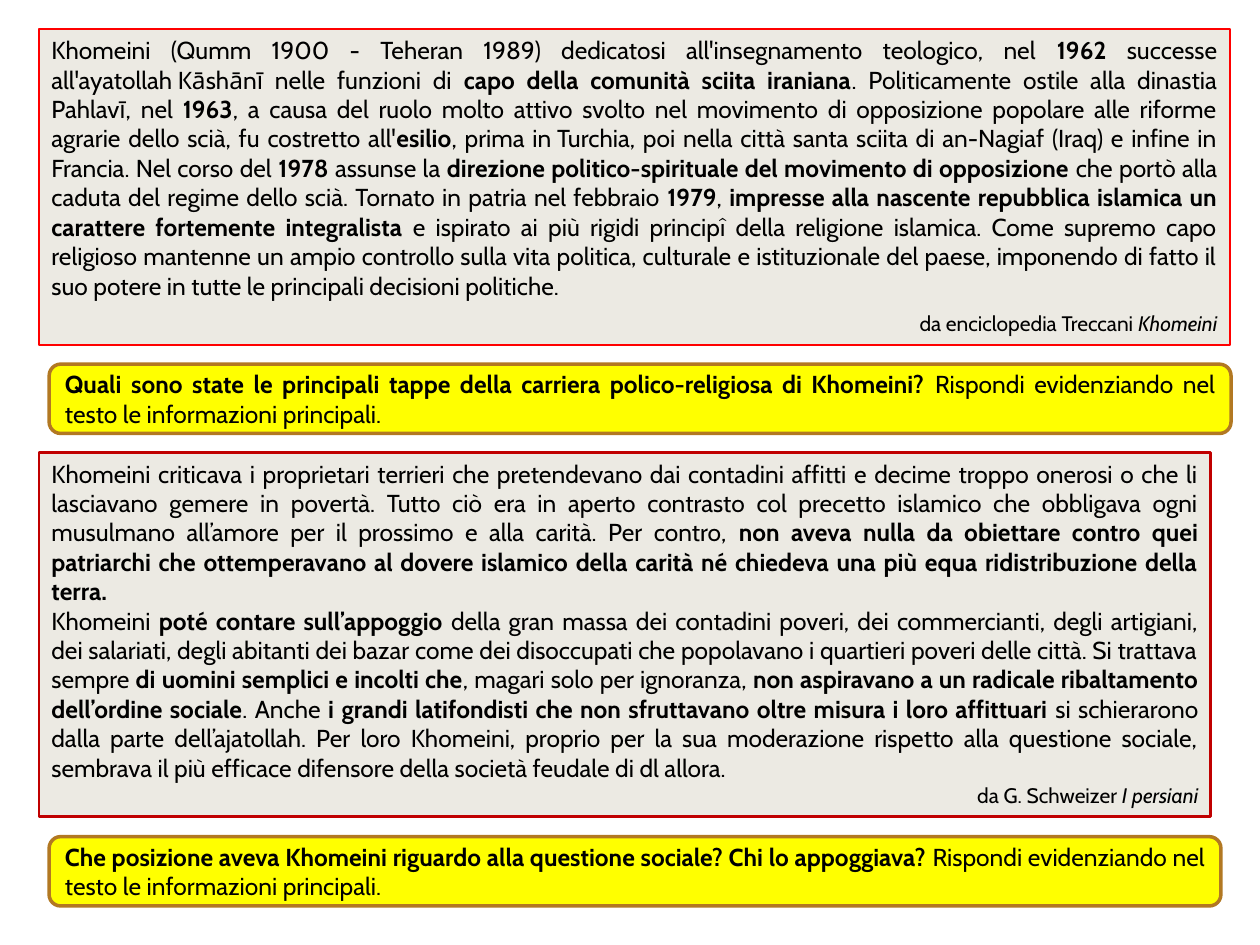
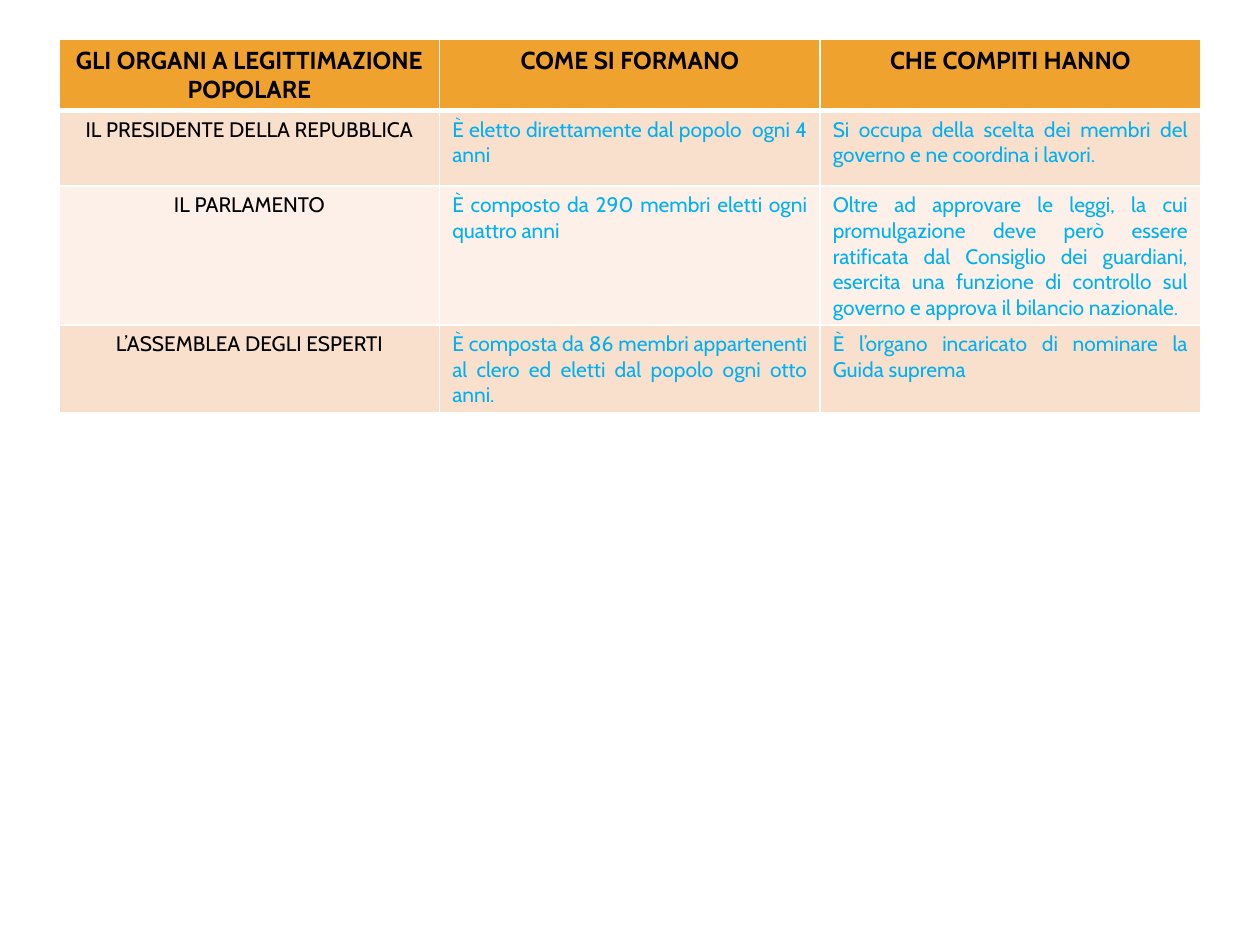
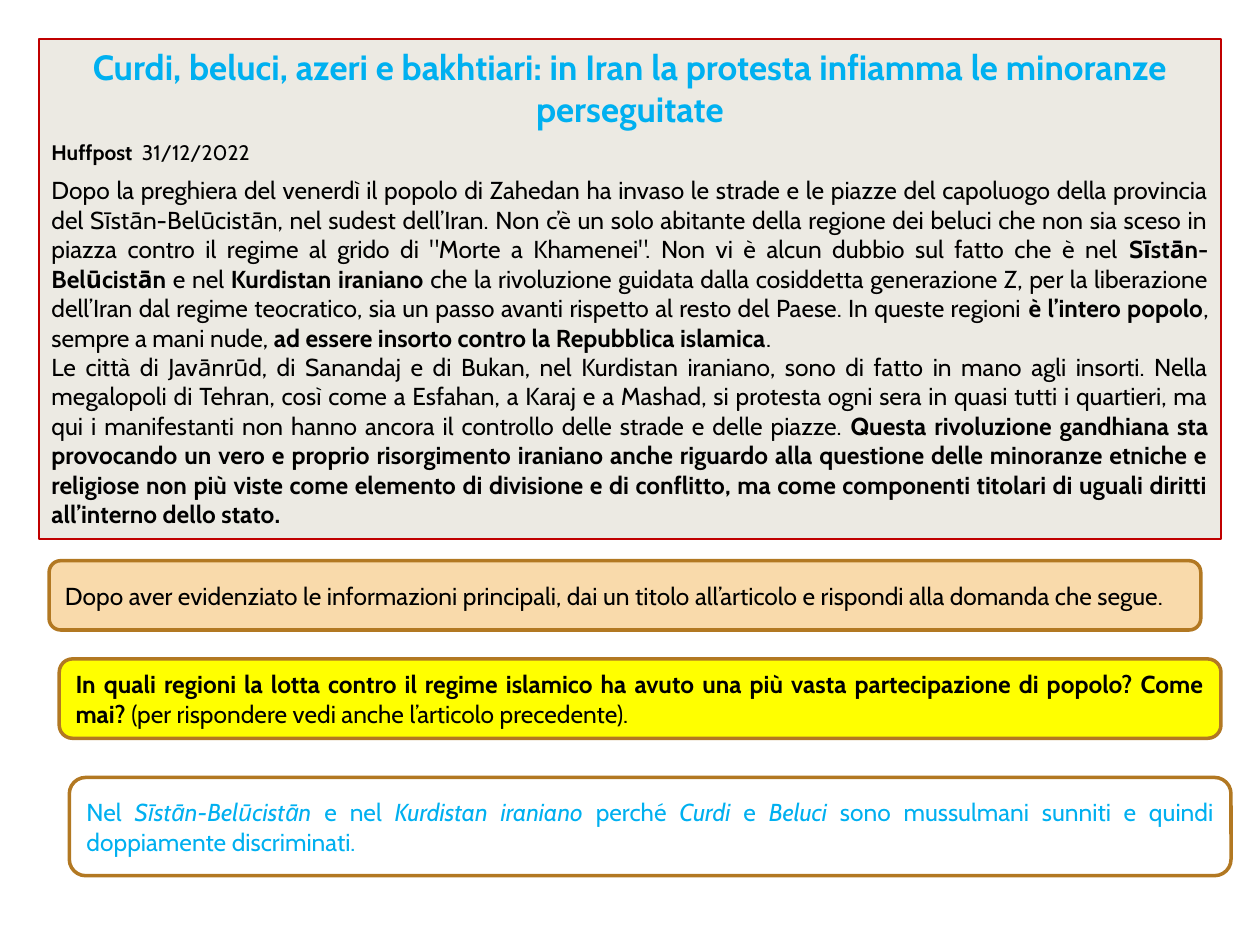
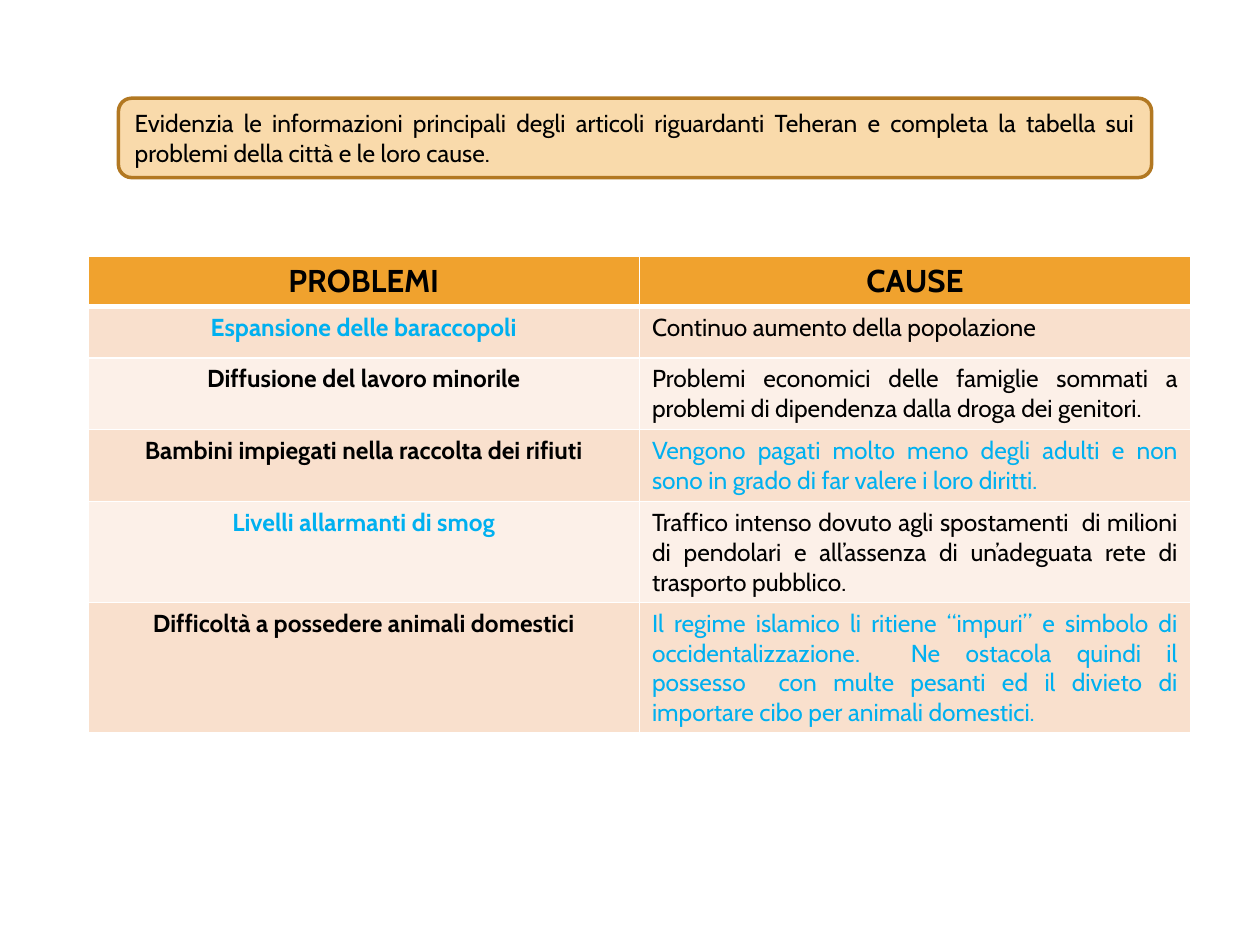
"""Build four worksheet slides on Khomeini, Iranian institutions, minorities and Teheran."""
import lxml.etree
import pptx
import pptx.dml.color
import pptx.enum.shapes
import pptx.enum.text
import pptx.oxml.ns
import pptx.util

Inches = pptx.util.Inches
Pt = pptx.util.Pt
Align = pptx.enum.text.PP_ALIGN
Anchor = pptx.enum.text.MSO_ANCHOR
Shape = pptx.enum.shapes.MSO_SHAPE

FONT = "Cabin"
NO_BREAK_SPACE = chr(160)
COLORS = {
    "text": "000000",
    "answer": "00B0F0",
    "reading": "ECEAE3",
    "question": "FFFF00",
    "task": "F9DAAB",
    "white": "FFFFFF",
    "brown": "B27822",
    "red": "FF0000",
    "dark red": "C00000",
    "header": "F0A22E",
    "odd row": "F9E0CD",
    "even row": "FCF0E8",
}

# Style: alignment, size, colour, bold by default, emphasis, space after
STYLES = {
    "body": (Align.JUSTIFY, 14, "text", False, "bold", 0),
    "body spaced": (Align.JUSTIFY, 14, "text", False, "bold", 6),
    "source": (Align.RIGHT, 12, "text", False, "italic", 0),
    "headline": (Align.CENTER, 20, "answer", True, "italic", 6),
    "dateline": (Align.JUSTIFY, 12, "text", False, "bold", 6),
    "answer": (Align.JUSTIFY, 14, "answer", False, "italic", 0),
    "organ header": (Align.CENTER, 14, "text", True, "italic", 0),
    "organ": (Align.CENTER, 12, "text", False, "bold", 0),
    "organ answer": (Align.JUSTIFY, 12, "answer", False, "bold", 0),
    "problem header": (Align.CENTER, 18, "text", True, "italic", 0),
    "problem": (Align.CENTER, 14, "text", True, "italic", 0),
    "problem answer": (Align.CENTER, 14, "answer", True, "italic", 0),
}

# Box kind: shape, fill, line colour, line width
BOXES = {
    "biography": (Shape.RECTANGLE, "reading", "red", 1),
    "reading": (Shape.RECTANGLE, "reading", "dark red", 1.5),
    "question": (Shape.ROUNDED_RECTANGLE, "question", "brown", 2),
    "task": (Shape.ROUNDED_RECTANGLE, "task", "brown", 2),
    "answer": (Shape.ROUNDED_RECTANGLE, "white", "brown", 2),
}

# Each paragraph is a style and pieces that alternate plain and emphasised text.
KHOMEINI_BOXES = [
    ("biography", (0.31, 0.23, 9.45, 2.51), [
        ("body spaced", [
            "Khomeini (Qumm 1900 - Teheran 1989) dedicatosi all'insegnamento teologico, nel ",
            "1962",
            f" successe all'ayatollah{NO_BREAK_SPACE}Kāshānī nelle funzioni di ",
            "capo della comunità sciita iraniana",
            ". Politicamente ostile alla dinastia Pahlavī, nel ",
            "1963",
            ", a causa del ruolo molto attivo svolto nel movimento di opposizione popolare "
            "alle riforme agrarie dello scià, fu costretto all'",
            "esilio",
            f", prima in{NO_BREAK_SPACE}Turchia, poi nella città santa sciita di an-Nagiaf "
            "(Iraq) e infine in Francia. Nel corso del ",
            "1978",
            " assunse la ",
            "direzione politico-spirituale del movimento di opposizione ",
            "che portò alla caduta del regime dello scià. Tornato in patria nel febbraio ",
            "1979",
            ", ",
            "impresse alla nascente repubblica islamica un carattere fortemente integralista ",
            "e ispirato ai più rigidi principî della religione islamica. Come supremo capo "
            "religioso mantenne un ampio controllo sulla vita politica, culturale e "
            "istituzionale del paese, imponendo di fatto il suo potere in tutte le "
            "principali decisioni politiche.",
        ]),
        ("source", ["da enciclopedia Treccani ", "Khomeini"]),
    ]),
    ("question", (0.39, 2.89, 9.38, 0.55), [
        ("body", [
            "",
            "Quali sono state le principali tappe della carriera polico-religiosa di Khomeini? ",
            "Rispondi evidenziando nel testo le informazioni principali.",
        ]),
    ]),
    ("reading", (0.31, 3.59, 9.3, 2.89), [
        ("body", [
            "Khomeini criticava i proprietari terrieri che pretendevano dai contadini affitti "
            "e decime troppo onerosi o che li lasciavano gemere in povertà. Tutto ciò era in "
            "aperto contrasto col precetto islamico che obbligava ogni musulmano all’amore "
            "per il prossimo e alla carità. Per contro, ",
            "non aveva nulla da obiettare contro quei patriarchi che ottemperavano al dovere "
            "islamico della carità né chiedeva una più equa ridistribuzione della terra.",
        ]),
        ("body", [
            "Khomeini ",
            "poté contare sull’appoggio",
            " della gran massa dei contadini poveri, dei commercianti, degli artigiani, dei "
            "salariati, degli abitanti dei bazar come dei disoccupati che popolavano i "
            "quartieri poveri delle città. Si trattava sempre ",
            "di uomini semplici e incolti che",
            ", magari solo per ignoranza, ",
            "non aspiravano a un radicale ribaltamento dell’ordine sociale",
            ". Anche ",
            "i grandi latifondisti che non sfruttavano oltre misura i loro affittuari ",
            "si schierarono dalla parte dell’ajatollah. Per loro Khomeini, proprio per la sua "
            "moderazione rispetto alla questione sociale, sembrava il più efficace difensore "
            "della società feudale di dl allora.",
        ]),
        ("source", ["da G. Schweizer ", "I persiani"]),
    ]),
    ("question", (0.39, 6.64, 9.3, 0.55), [
        ("body", [
            "",
            "Che posizione aveva Khomeini riguardo alla questione sociale? Chi lo appoggiava? ",
            "Rispondi evidenziando nel testo le informazioni principali.",
        ]),
    ]),
]

MINORITIES_BOXES = [
    ("reading", (0.31, 0.31, 9.38, 3.97), [
        ("headline", [
            "Curdi, beluci, azeri e bakhtiari: in Iran la protesta infiamma le minoranze "
            "perseguitate",
        ]),
        ("dateline", ["", "Huffpost  ", "31/12/2022"]),
        ("body", [
            "Dopo la preghiera del venerdì il popolo di Zahedan ha invaso le strade e le "
            "piazze del capoluogo della provincia del Sīstān-Belūcistān, nel sudest "
            "dell’Iran. Non c’è un solo abitante della regione dei beluci che non sia sceso "
            "in piazza contro il regime al grido di \"Morte a Khamenei\". Non vi è alcun "
            "dubbio sul fatto che è nel ",
            "Sīstān-Belūcistān",
            " e nel ",
            "Kurdistan iraniano ",
            "che la rivoluzione guidata dalla cosiddetta generazione Z, per la liberazione "
            "dell’Iran dal regime teocratico, sia un passo avanti rispetto al resto del "
            "Paese. In queste regioni ",
            "è l’intero popolo",
            ", sempre a mani nude, ",
            "ad essere insorto contro la Repubblica islamica",
            ".",
        ]),
        ("body", [
            "Le città di Javānrūd, di Sanandaj e di Bukan, nel Kurdistan iraniano, sono di "
            "fatto in mano agli insorti. Nella megalopoli di Tehran, così come a Esfahan, a "
            "Karaj e a Mashad, si protesta ogni sera in quasi tutti i quartieri, ma qui i "
            "manifestanti non hanno ancora il controllo delle strade e delle piazze. ",
            "Questa rivoluzione gandhiana sta provocando un vero e proprio risorgimento "
            "iraniano anche riguardo alla questione delle minoranze etniche e religiose non "
            "più viste come elemento di divisione e di conflitto, ma come componenti "
            "titolari di uguali diritti all’interno dello stato.",
        ]),
    ]),
    ("question", (0.47, 5.23, 9.22, 0.63), [
        ("body", [
            "",
            "In quali regioni la lotta contro il regime islamico ha avuto una più vasta "
            "partecipazione di popolo? Come mai? ",
            "(per rispondere vedi anche l’articolo precedente).",
        ]),
    ]),
    ("answer", (0.55, 6.17, 9.22, 0.78), [
        ("answer", [
            "Nel ", "Sīstān-Belūcistān ", "e nel ", "Kurdistan iraniano ", "perché",
            " Curdi", " e ", "Beluci ",
            "sono mussulmani sunniti e quindi doppiamente discriminati.",
        ]),
    ]),
    ("task", (0.39, 4.45, 9.14, 0.55), [
        ("body", [
            "Dopo aver evidenziato le informazioni principali, dai un titolo all’articolo e "
            "rispondi alla domanda che segue.",
        ]),
    ]),
]

TEHERAN_BOXES = [
    ("task", (0.94, 0.78, 8.2, 0.63), [
        ("body", [
            "Evidenzia le informazioni principali degli articoli riguardanti Teheran e "
            "completa la tabella sui problemi della città e le loro cause.",
        ]),
    ]),
]

ORGANS_TABLE = {
    "place": (0.47, 0.31, 9.06),
    "row heights": [0.56, 0.6, 1.1, 0.7],
    "rows": [
        [("organ header", "GLI ORGANI A LEGITTIMAZIONE POPOLARE"),
         ("organ header", "COME SI FORMANO"),
         ("organ header", "CHE COMPITI HANNO")],
        [("organ", "IL PRESIDENTE DELLA REPUBBLICA"),
         ("organ answer", "È eletto direttamente dal popolo  ogni 4 anni"),
         ("organ answer", "Si occupa della scelta dei membri del governo e ne coordina i "
                          "lavori.")],
        [("organ", "IL PARLAMENTO"),
         ("organ answer", "È composto da 290 membri eletti ogni quattro anni"),
         ("organ answer", "Oltre ad approvare le leggi, la cui promulgazione deve però essere "
                          "ratificata dal Consiglio dei guardiani, esercita una funzione di "
                          "controllo sul governo e approva il bilancio nazionale.")],
        [("organ", "L’ASSEMBLEA DEGLI ESPERTI"),
         ("organ answer", "È composta da 86 membri appartenenti al clero ed eletti dal popolo "
                          "ogni otto anni."),
         ("organ answer", "È l’organo incaricato di nominare la Guida suprema")],
    ],
}

PROBLEMS_TABLE = {
    "place": (0.7, 2.03, 8.75),
    "row heights": [0.4, 0.41, 0.57, 0.57, 0.8, 1.03],
    "rows": [
        [("problem header", "PROBLEMI"), ("problem header", "CAUSE")],
        [("problem answer", "Espansione delle baraccopoli"),
         ("body", "Continuo aumento della popolazione")],
        [("problem", "Diffusione del lavoro minorile"),
         ("body", "Problemi economici delle famiglie sommati a problemi di dipendenza dalla "
                  "droga dei genitori.")],
        [("problem", "Bambini impiegati nella raccolta dei rifiuti"),
         ("answer", "Vengono pagati molto meno degli adulti e non sono in grado di far valere "
                    "i loro diritti.")],
        [("problem answer", "Livelli allarmanti di smog"),
         ("body", "Traffico intenso dovuto agli spostamenti  di milioni di pendolari e "
                  "all’assenza di un’adeguata rete di trasporto pubblico.")],
        [("problem", "Difficoltà a possedere animali domestici"),
         ("answer", "Il regime islamico li ritiene “impuri” e simbolo di occidentalizzazione.  "
                    "Ne ostacola quindi il possesso  con multe pesanti ed il divieto di "
                    "importare cibo per animali domestici.")],
    ],
}

SLIDES = [
    (None, KHOMEINI_BOXES),
    (ORGANS_TABLE, []),
    (None, MINORITIES_BOXES),
    (PROBLEMS_TABLE, TEHERAN_BOXES),
]


def rgb(name):
    return pptx.dml.color.RGBColor.from_string(COLORS[name])


def fill_solid(fill, color):
    fill.solid()
    fill.fore_color.rgb = rgb(color)


def write_paragraphs(frame, paragraphs):
    for number, (style, pieces) in enumerate(paragraphs):
        alignment, size, color, bold, emphasis, space_after = STYLES[style]
        paragraph = frame.add_paragraph() if number else frame.paragraphs[0]
        paragraph.alignment = alignment
        paragraph.space_after = Pt(space_after)
        for index, piece in enumerate(pieces):
            if not piece:
                continue
            run = paragraph.add_run()
            run.text = piece
            run.font.name = FONT
            run.font.size = Pt(size)
            run.font.color.rgb = rgb(color)
            run.font.bold = bold
            if index % 2:
                setattr(run.font, emphasis, True)


def add_box(slide, kind, place, paragraphs):
    outline, fill, line, width = BOXES[kind]
    shape = slide.shapes.add_shape(outline, *map(Inches, place))
    shape.shadow.inherit = False
    fill_solid(shape.fill, fill)
    shape.line.color.rgb = rgb(line)
    shape.line.width = Pt(width)
    frame = shape.text_frame
    frame.word_wrap = True
    if outline == Shape.RECTANGLE:
        frame.vertical_anchor = Anchor.TOP
        frame.auto_size = pptx.enum.text.MSO_AUTO_SIZE.SHAPE_TO_FIT_TEXT
    else:
        frame.vertical_anchor = Anchor.MIDDLE
    write_paragraphs(frame, paragraphs)


def add_border(cell, side, width):
    properties = cell._tc.get_or_add_tcPr()
    qualified = pptx.oxml.ns.qn
    line = lxml.etree.SubElement(properties, qualified(f"a:ln{side}"), w=str(Pt(width)))
    solid = lxml.etree.SubElement(line, qualified("a:solidFill"))
    lxml.etree.SubElement(solid, qualified("a:srgbClr"), val=COLORS["white"])


def add_grid(slide, content):
    left, top, width = content["place"]
    heights, rows = content["row heights"], content["rows"]
    column_count = len(rows[0])
    table = slide.shapes.add_table(
        len(rows), column_count, Inches(left), Inches(top), Inches(width), Inches(sum(heights))
    ).table
    for column in table.columns:
        column.width = Inches(width / column_count)
    for row_index, (height, row) in enumerate(zip(heights, rows)):
        table.rows[row_index].height = Inches(height)
        fill = "header" if row_index == 0 else "odd row" if row_index % 2 else "even row"
        for column_index, (style, text) in enumerate(row):
            cell = table.cell(row_index, column_index)
            for side in "LRTB":
                below_header = (row_index, side) in ((0, "B"), (1, "T"))
                add_border(cell, side, 3 if below_header else 1)
            fill_solid(cell.fill, fill)
            write_paragraphs(cell.text_frame, [(style, [text])])


def main():
    presentation = pptx.Presentation()
    presentation.slide_width = Inches(10)
    presentation.slide_height = Inches(7.5)
    blank_layout = presentation.slide_layouts[6]
    for table, boxes in SLIDES:
        slide = presentation.slides.add_slide(blank_layout)
        fill_solid(slide.background.fill, "white")
        if table:
            add_grid(slide, table)
        for box in boxes:
            add_box(slide, *box)
    presentation.save("out.pptx")


if __name__ == "__main__":
    main()
